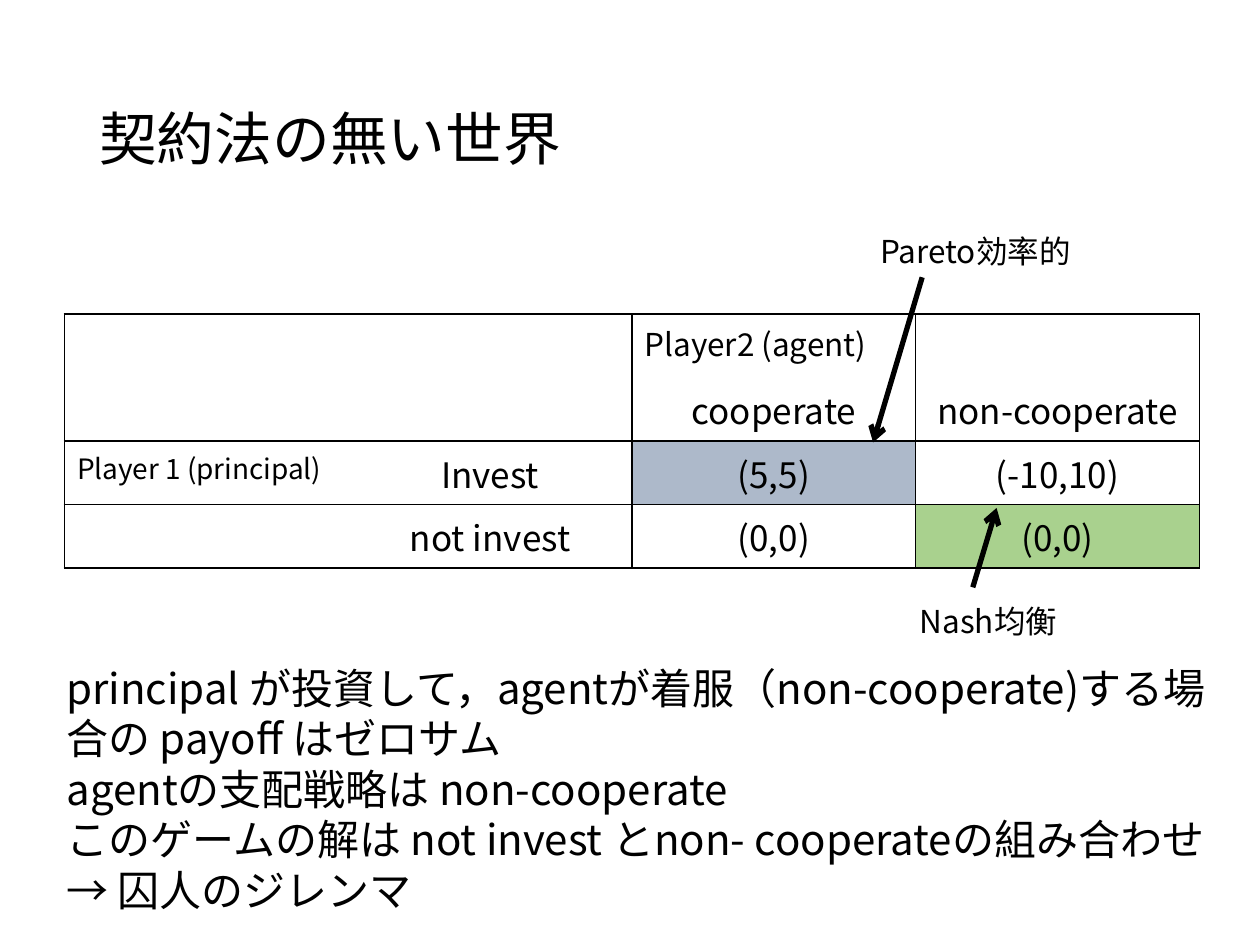
import pptx
import pptx.dml.color
import pptx.enum.text
import pptx.oxml
import pptx.oxml.ns
import pptx.util
from pptx.util import Cm

FONT = "Noto Sans CJK JP"
LEFT = pptx.enum.text.PP_ALIGN.LEFT
CENTER = pptx.enum.text.PP_ALIGN.CENTER
TOP = pptx.enum.text.MSO_ANCHOR.TOP
MIDDLE = pptx.enum.text.MSO_ANCHOR.MIDDLE


def color(value):
    return pptx.dml.color.RGBColor.from_string(value)


def xml(tag, content="", attrs=""):
    """Make a DrawingML element from its tag, inner markup and attributes."""
    return pptx.oxml.parse_xml(
        f'<a:{tag} {pptx.oxml.ns.nsdecls("a")} {attrs}>{content}</a:{tag}>')


def set_all(obj, values):
    for name, value in values.items():
        setattr(obj, name, value)


class Deck:
    """Holds the text style and the current slide."""

    def __init__(self, width, height, ink="000000"):
        self.prs = pptx.Presentation()
        set_all(self.prs, {"slide_width": Cm(width), "slide_height": Cm(height)})
        self.ink = ink
        self.s = self.prs.slides.add_slide(self.prs.slide_layouts[6])

    def fill_paragraph(self, p, text, size, align=LEFT, spacing=None):
        set_all(p, {"alignment": align, "line_spacing": spacing})
        r = p.add_run()
        r.text = text
        set_all(r.font, {"name": FONT, "size": pptx.util.Pt(size)})
        r.font.color.rgb = color(self.ink)
        r.font._element.append(xml("ea", attrs=f'typeface="{FONT}"'))

    def text(self, box, lines, size, anchor=TOP, spacing=None):
        """Add a text box; lines are set at 1.2 times the size by default."""
        tf = self.s.shapes.add_textbox(*map(Cm, box)).text_frame
        set_all(tf, {"word_wrap": True, "vertical_anchor": anchor})
        for i, line in enumerate(lines):
            p = tf.add_paragraph() if i else tf.paragraphs[0]
            self.fill_paragraph(p, line, size,
                                spacing=spacing or pptx.util.Pt(1.2 * size))

    def arrow(self, start, end, width=3):
        cx = self.s.shapes.add_connector(1, *map(Cm, start + end))
        cx.line.width = pptx.util.Pt(width)
        cx.line.color.rgb = color(self.ink)
        cx.line._get_or_add_ln().append(xml("tailEnd", attrs='type="arrow"'))
        cx._element.spPr.append(xml("effectLst"))

    def borders(self, cell, sides):
        """Draw the named sides (L, R, T, B) of a cell and clear the others."""
        solid = f'<a:solidFill><a:srgbClr val="{self.ink}"/></a:solidFill>'
        tcPr = cell._tc.get_or_add_tcPr()
        for i, side in enumerate("LRTB"):
            line = solid if side in sides else "<a:noFill/>"
            tcPr.insert(i, xml(f"ln{side}", line, 'w="12700"'))

    def table(self, left, top, col_width, row_height, rows, fills, col_rules, row_rules):
        """Add a table ruled before the given columns and rows, and at its end."""
        n, m = len(rows), len(rows[0])
        tb = self.s.shapes.add_table(
            n, m, Cm(left), Cm(top), Cm(col_width * m), Cm(row_height * n)).table
        set_all(tb, {"first_row": False, "horz_banding": False})
        for col in tb.columns:
            col.width = Cm(col_width)
        for i, row in enumerate(rows):
            tb.rows[i].height = Cm(row_height)
            for j, entry in enumerate(row):
                cell = tb.cell(i, j)
                if entry:
                    self.fill_paragraph(cell.text_frame.paragraphs[0], *entry)
                if (i, j) in fills:
                    cell.fill.solid()
                    cell.fill.fore_color.rgb = color(fills[i, j])
                else:
                    cell.fill.background()
                edges = {"L": j in col_rules, "R": j + 1 in col_rules,
                         "T": i in row_rules, "B": i + 1 in row_rules}
                self.borders(cell, [side for side, on in edges.items() if on])


def centered(text):
    return text, 20, CENTER


def main():
    deck = Deck(25.4, 19.05)
    deck.text((1.75, 1.02, 21.9, 3.68), ["契約法の無い世界"], 33, MIDDLE, 0.9)
    payoffs = [
        [None, None, ("Player2 (agent)", 18), None],
        [None, None, centered("cooperate"), centered("non-cooperate")],
        [("Player 1 (principal)", 16), *map(centered, ("Invest", "(5,5)", "(-10,10)"))],
        [None, *map(centered, ("not invest", "(0,0)", "(0,0)"))],
    ]
    pareto, nash = (2, 2), (3, 3)
    deck.table(1.3, 6.33, 5.72, 1.28, payoffs, {pareto: "ADB9CA", nash: "A9D18E"},
               col_rules=(0, 2, 3, 4), row_rules=(0, 2, 3, 4))
    deck.text((18.29, 12.01, 3.61, 1.02), ["Nash均衡"], 18)
    deck.arrow((19.61, 11.84), (20.09, 10.24))
    deck.text((17.5, 4.55, 5.21, 1.02), ["Pareto効率的"], 18)
    deck.arrow((18.59, 5.59), (17.6, 8.92))
    deck.text((1.09, 13.23, 23.6, 5.38), [
        "principal が投資して，agentが着服（non-cooperate)する場合の payoff はゼロサム",
        "agentの支配戦略は non-cooperate",
        "このゲームの解は not invest とnon- cooperateの組み合わせ → 囚人のジレンマ",
    ], 24)
    deck.prs.save("out.pptx")


if __name__ == "__main__":
    main()
